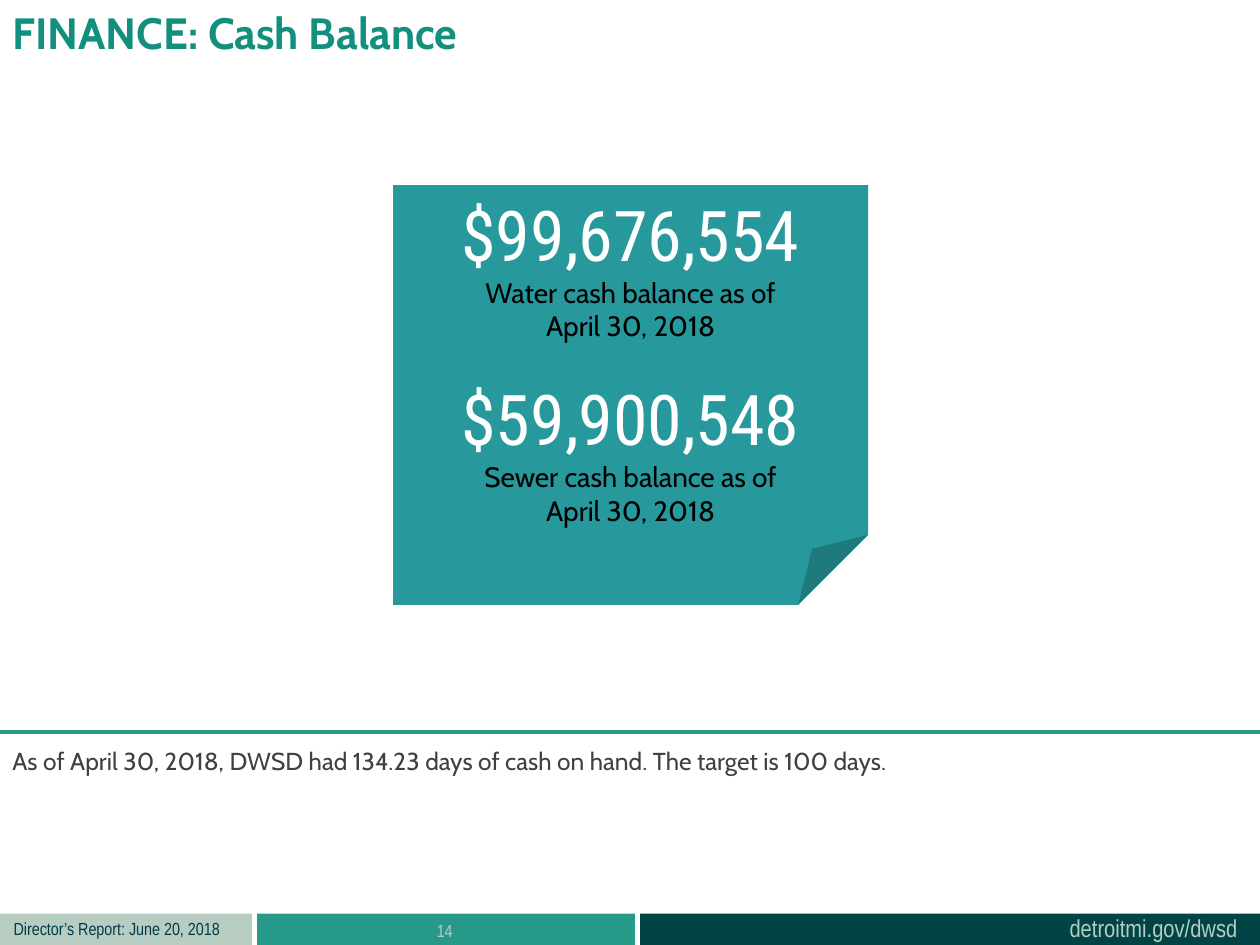
from lxml import etree
from pptx import Presentation
from pptx.dml.color import RGBColor
from pptx.enum.shapes import MSO_CONNECTOR, MSO_SHAPE
from pptx.enum.text import MSO_ANCHOR, PP_ALIGN
from pptx.oxml.ns import qn
from pptx.util import Inches, Pt

RECT, FOLD = MSO_SHAPE.RECTANGLE, MSO_SHAPE.FOLDED_CORNER
LINE, TOP = MSO_CONNECTOR.STRAIGHT, MSO_ANCHOR.TOP
LEFT, MID = PP_ALIGN.LEFT, PP_ALIGN.CENTER

WIDE, HIGH = 10, 7.5
BAR, GAP, RULE = 0.25, 0.04, 5.81
HEX = {"teal": "279989", "dark": "004445", "pale": "B7CDC2", "navy": "003B49",
       "title": "138F7E", "gray": "404040", "note": "27999D",
       "white": "FFFFFF", "black": "000000"}
STYLES = {
    "title": ("Cabin", 25, "title", True),
    "body": ("Cabin", 14, "gray", False),
    "sum": ("Roboto Condensed", 40, "white", False),
    "label": ("Cabin", 16, "black", False),
    "site": ("Arial Narrow", 14, "pale", False),
    "date": ("Arial Narrow", 10, "navy", False),
    "page": ("Arial Narrow", 10, "pale", False),
}
BARS = [("pale", 2), ("teal", 3), ("dark", WIDE - 5 - 2 * GAP)]
TEXTS = [
    ("detroitmi.gov/dwsd", "site", (8.39, 7.2, 1.55, 0.34), LEFT, False),
    ("Director’s Report: June 20, 2018", "date", (0.01, 7.24, 1.84, 0.27), LEFT, False),
    ("14", "page", (2.03, 7.25, 3, 0.4), MID, True),
    ("FINANCE: Cash Balance", "title", (0, 0, 7.59, 0.77), LEFT, True),
    ("As of April 30, 2018, DWSD had 134.23 days of cash on hand. "
     "The target is 100 days.", "body", (0, 5.87, WIDE, 0.34), LEFT, True),
]
FUNDS = [("$99,676,554", "Water"), ("$59,900,548", "Sewer")]
LABEL = ("{} cash balance as of", "April 30, 2018")
NOTE = (3.12, 1.47, 3.77, 3.33)


def tint(name):
    return RGBColor.from_string(HEX[name])


def place(box):
    return [Inches(v) for v in box]


def write(para, lines, style, align):
    face, size, color, bold = STYLES[style]
    para.alignment = align
    for i, line in enumerate(lines):
        if i:
            para.add_line_break()
        run = para.add_run()
        run.text = line
        font = run.font
        font.name, font.size, font.bold = face, Pt(size), bold
        font.color.rgb = tint(color)


def block(slide, kind, box, color):
    shape = slide.shapes.add_shape(kind, *place(box))
    shape.shadow.inherit = False
    shape.fill.solid()
    shape.fill.fore_color.rgb = tint(color)
    shape.line.fill.background()
    return shape


def main():
    deck = Presentation()
    deck.slide_width, deck.slide_height = Inches(WIDE), Inches(HIGH)
    slide = deck.slides.add_slide(deck.slide_layouts[6])

    left = 0
    for color, width in BARS:
        block(slide, RECT, (left, HIGH - BAR, width, BAR), color)
        left += width + GAP

    for text, style, box, align, wrap in TEXTS:
        frame = slide.shapes.add_textbox(*place(box)).text_frame
        frame.word_wrap = wrap
        write(frame.paragraphs[0], [text], style, align)

    rule = slide.shapes.add_connector(LINE, *place((WIDE, RULE, 0, RULE)))
    rule.line.color.rgb = tint("teal")
    rule.line.width = Pt(2.25)
    etree.SubElement(rule._element.spPr, qn("a:effectLst"))

    frame = block(slide, FOLD, NOTE, "note").text_frame
    frame.word_wrap = True
    frame.vertical_anchor = TOP
    for i, (total, fund) in enumerate(FUNDS):
        para = frame.add_paragraph() if i else frame.paragraphs[0]
        if i:
            para.space_before = Pt(19)
        write(para, [total], "sum", MID)
        lines = [part.format(fund) for part in LABEL]
        write(frame.add_paragraph(), lines, "label", MID)

    deck.save("out.pptx")


if __name__ == "__main__":
    main()
